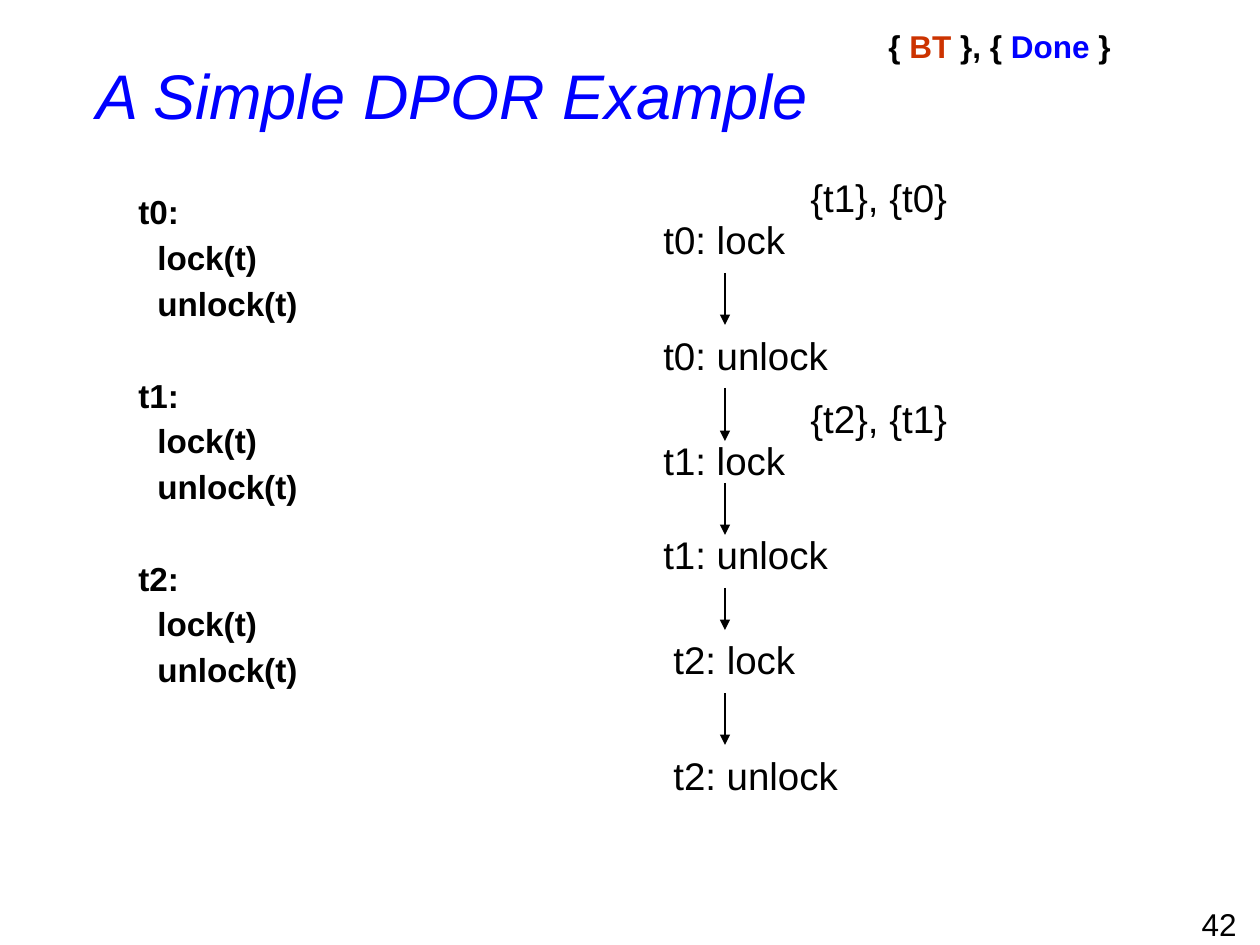
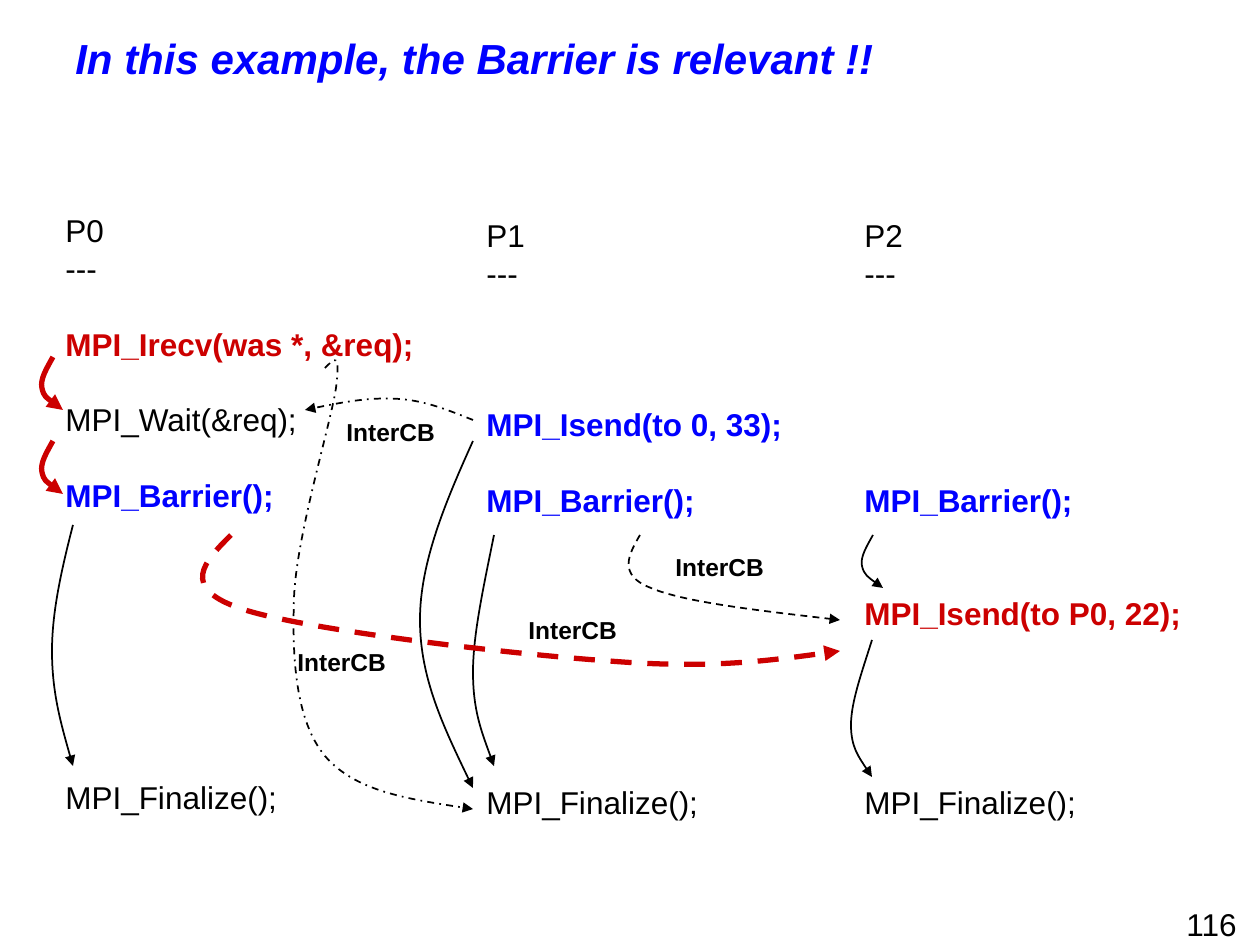
"""Builds two slides on partial order reduction and barrier relevance."""
from lxml import etree
from pptx import Presentation
from pptx import util as u
from pptx.dml.color import RGBColor
from pptx.enum import dml, shapes, text
from pptx.oxml.ns import qn

PX = u.Inches(1) / 126
FONT = "Arial"
BLACK = RGBColor(0x00, 0x00, 0x00)
BLUE = RGBColor(0x00, 0x00, 0xFF)
RED = RGBColor(0xCC, 0x00, 0x00)
RUST = RGBColor(0xCC, 0x33, 0x00)
LEADING = 1.2


def px(length):
    return u.Emu(round(length * PX))


class Deck:
    def __init__(self, width, height):
        self.show = Presentation()
        self.show.slide_width, self.show.slide_height = px(width), px(height)
        self.slide = None

    def new_slide(self, number):
        self.slide = self.show.slides.add_slide(self.show.slide_layouts[6])
        frame = self.label(str(number), 987, 903, 262, 42, wrap=True)
        frame.vertical_anchor = text.MSO_ANCHOR.MIDDLE
        frame.paragraphs[0].alignment = text.PP_ALIGN.RIGHT

    def frame(self, left, top, width, height, wrap):
        box = self.slide.shapes.add_textbox(px(left), px(top), px(width), px(height))
        box.text_frame.word_wrap = wrap
        if not wrap:
            box.text_frame.auto_size = text.MSO_AUTO_SIZE.SHAPE_TO_FIT_TEXT
        return box.text_frame

    def style(self, paragraph, size, color=BLACK, bold=False, italic=False):
        for run in paragraph.runs:
            run.font.name, run.font.size = FONT, u.Pt(size)
            run.font.bold, run.font.italic = bold, italic
            run.font.color.rgb = color

    def label(self, words, left, top, width, height, size=18, bold=False, wrap=False):
        frame = self.frame(left, top, width, height, wrap)
        frame.text = words
        frame.paragraphs[0].line_spacing = u.Pt(size * LEADING)
        self.style(frame.paragraphs[0], size, bold=bold)
        return frame

    def title(self, words, left, top, width, height, size, bold=False):
        frame = self.frame(left, top, width, height, True)
        frame.text = words
        frame.paragraphs[0].line_spacing = 0.9
        self.style(frame.paragraphs[0], size, BLUE, bold, True)

    def legend(self, parts, left, top, width, height):
        paragraph = self.label("", left, top, width, height).paragraphs[0]
        for words, _ in parts:
            paragraph.add_run().text = words
        self.style(paragraph, 18, bold=True)
        for run, (_, color) in zip(paragraph.runs, parts):
            run.font.color.rgb = color

    def threads(self, names, calls, left, top, width, height, size=19):
        frame = self.frame(left, top, width, height, True)
        lines = [line for name in names for line in (name + ":", *calls)]
        frame.text = "\n".join(lines)
        for index, paragraph in enumerate(frame.paragraphs):
            is_call = lines[index] in calls
            paragraph.line_spacing = 0.9
            if index:
                paragraph.space_before = u.Pt(5.65 if is_call else 31.8)
            if is_call:
                paragraph._p.get_or_add_pPr().set("marL", str(px(19)))
            self.style(paragraph, size, bold=True)

    def process(self, name, calls, left, top, width, height=619, size=18):
        lines = [(name, 0, BLACK), ("---", 0, BLACK), *calls]
        frame = self.frame(left, top, width, height, False)
        frame.text = "\n".join(words for words, _, _ in lines)
        for paragraph, (_, skipped, color) in zip(frame.paragraphs, lines):
            paragraph.line_spacing = u.Pt(size * LEADING)
            paragraph.space_before = u.Pt(skipped * size * LEADING)
            self.style(paragraph, size, color, color != BLACK)

    def finish_arrow(self, arrow, color, weight, dash=None):
        arrow.line.color.rgb = color
        arrow.line.width = u.Pt(weight)
        if dash:
            arrow.line.dash_style = dash
        etree.SubElement(arrow.line._get_or_add_ln(), qn("a:tailEnd"), type="triangle")
        etree.SubElement(arrow._element.spPr, qn("a:effectLst"))

    def arrow(self, x, top, bottom):
        arrow = self.slide.shapes.add_connector(
            shapes.MSO_CONNECTOR.STRAIGHT, px(x), px(top), px(x), px(bottom))
        self.finish_arrow(arrow, BLACK, 0.75)

    def curve(self, points, color=BLACK, weight=1, dash=None):
        builder = self.slide.shapes.build_freeform(*points[0], scale=PX)
        builder.add_line_segments(points[1:], close=False)
        curve = builder.convert_to_shape()
        curve.fill.background()
        segments = list(curve._element.iter(qn("a:lnTo")))
        outline = segments[0].getparent()
        for start in range(0, len(segments), 3):
            bezier = etree.SubElement(outline, qn("a:cubicBezTo"))
            for segment in segments[start:start + 3]:
                bezier.append(segment[0])
                outline.remove(segment)
        self.finish_arrow(curve, color, weight, dash)

    def hook(self, x, y, color=BLACK, weight=1):
        offsets = [(0, 0), (-6, 11), (-13, 22), (-11, 31), (-9, 40), (0, 46), (10, 53)]
        self.curve([(x + dx, y + dy) for dx, dy in offsets], color, weight)

    def bow(self, x, depth, heights):
        bends = (0, 0.5, 1, 1, 1, 0.5, 0)
        self.curve([(round(x - depth * bend), y) for bend, y in zip(bends, heights)])


def dpor_example(deck):
    deck.new_slide(42)
    steps = [("t0: lock", 651, 210), ("t0: unlock", 651, 326), ("t1: lock", 651, 431),
             ("t1: unlock", 651, 525), ("t2: lock", 661, 630), ("t2: unlock", 661, 746)]
    for step, left, top in steps:
        deck.label(step, left, top, 190 if "unlock" in step else 147, 59, 22)
    for top, bottom in [(273, 325), (388, 441), (483, 535), (588, 630), (693, 745)]:
        deck.arrow(725, top, bottom)
    for sets, top in [("{t1}, {t0}", 168), ("{t2}, {t1}", 389)]:
        deck.label(sets, 798, top, 163, 59, 22)
    deck.threads(["t0", "t1", "t2"], ["lock(t)", "unlock(t)"], 126, 190, 305, 624)
    deck.title("A Simple DPOR Example", 84, 59, 1134, 110, 36)
    deck.legend([("{ ", BLACK), ("BT", RUST), (" }, { ", BLACK), ("Done", BLUE),
                 (" }", BLACK)], 876, 21, 248, 50)


def barrier_example(deck):
    deck.new_slide(116)
    deck.title("In this example, the Barrier is relevant !!", 63, 32, 1197, 126, 24, True)
    barrier, finalize = "MPI_Barrier();", "MPI_Finalize();"
    deck.process("P0", [("MPI_Irecv(was *, &req);", 1, RED), ("MPI_Wait(&req);", 1, BLACK),
                        (barrier, 1, BLUE), (finalize, 7, BLACK)], 53, 205, 374)
    deck.process("P1", [("MPI_Isend(to 0, 33);", 3, BLUE), (barrier, 1, BLUE),
                        (finalize, 7, BLACK)], 474, 210, 321)
    deck.process("P2", [(barrier, 5, BLUE), ("MPI_Isend(to P0, 22);", 2, RED),
                        (finalize, 4, BLACK)], 852, 210, 343)

    for top in (357, 441):
        deck.hook(53, top, RED, 3)
    deck.hook(873, 535)
    deck.bow(872, 21, (640, 672, 702, 725, 747, 762, 777))
    deck.bow(73, 21, (525, 568, 611, 651, 692, 728, 766))
    deck.bow(494, 21, (535, 585, 634, 672, 711, 738, 766))
    deck.bow(473, 53, (441, 501, 562, 620, 678, 732, 788))

    isend_to_wait = [(473, 420), (450, 411), (427, 401), (399, 399), (370, 397),
                     (338, 403), (305, 410)]
    irecv_to_finalize = [(325, 368), (334, 359), (341, 350), (336, 388), (330, 427),
                         (296, 537), (294, 599), (292, 660), (296, 721), (325, 756),
                         (355, 791), (413, 800), (473, 809)]
    p1_barrier_to_isend = [(640, 535), (629, 554), (617, 575), (651, 588), (684, 602),
                           (762, 611), (840, 620)]
    p0_barrier_to_isend = [(231, 535), (204, 562), (179, 588), (242, 609), (305, 630),
                           (509, 654), (609, 661), (708, 669), (775, 660), (840, 651)]
    for points in (isend_to_wait, irecv_to_finalize):
        deck.curve(points, dash=dml.MSO_LINE.DASH_DOT)
    deck.curve(p1_barrier_to_isend, dash=dml.MSO_LINE.DASH)
    deck.curve(p0_barrier_to_isend, RED, 3, dml.MSO_LINE.DASH)
    for left, top in [(334, 411), (285, 641), (663, 546), (516, 609)]:
        deck.label("InterCB", left, top, 114, 42, 14, True)


def main():
    deck = Deck(1260, 945)
    dpor_example(deck)
    barrier_example(deck)
    deck.show.save("out.pptx")


if __name__ == "__main__":
    main()
